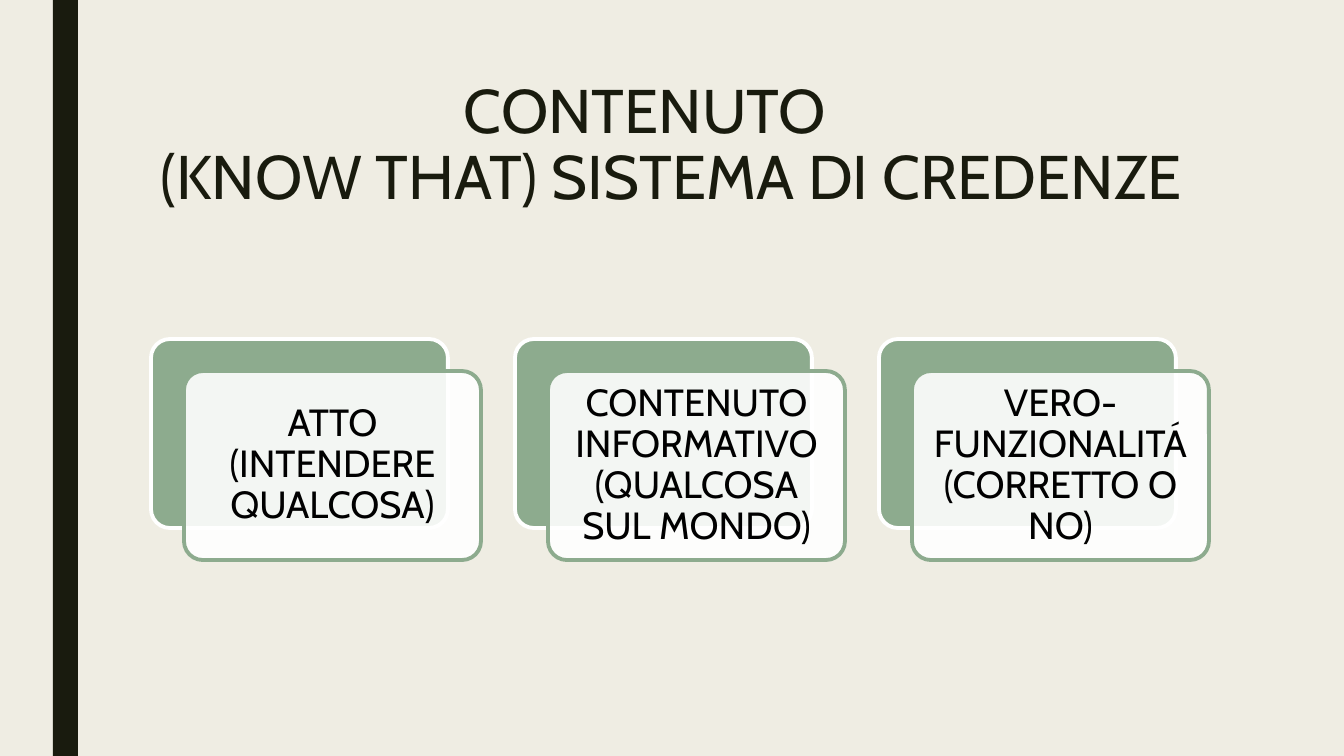
from lxml import etree
from pptx import Presentation
from pptx.dml.color import RGBColor
from pptx.enum.shapes import MSO_SHAPE
from pptx.enum.text import MSO_ANCHOR, PP_ALIGN
from pptx.oxml.ns import qn
from pptx.util import Pt

RECTANGLE = MSO_SHAPE.RECTANGLE
ROUNDED = MSO_SHAPE.ROUNDED_RECTANGLE
TOP, MIDDLE = MSO_ANCHOR.TOP, MSO_ANCHOR.MIDDLE
CENTER = PP_ALIGN.CENTER

SLIDE_WIDTH, SLIDE_HEIGHT = 1344, 756
FONT = "Cabin"
BACKGROUND, DARK, GREEN, WHITE, BLACK = "EFEDE3", "191B0E", "8DAB8E", "FFFFFF", "000000"

TITLE = "CONTENUTO\v(KNOW THAT) SISTEMA DI CREDENZE"
CARDS = [
    "ATTO (INTENDERE QUALCOSA)",
    "CONTENUTO INFORMATIVO (QUALCOSA SUL MONDO)",
    "VERO-FUNZIONALITÁ (CORRETTO O NO)",
]


def px(length):
    return round(length * 914400 / 100.8)


def color(value):
    return RGBColor.from_string(value)


def add_block(slide, kind, box, fill, line=None):
    shape = slide.shapes.add_shape(kind, *map(px, box))
    shape.shadow.inherit = False
    shape.fill.solid()
    shape.fill.fore_color.rgb = color(fill)
    if line:
        shape.line.color.rgb = color(line)
        shape.line.width = Pt(2.75)
    else:
        shape.line.fill.background()
    if kind == ROUNDED:
        shape.adjustments[0] = 0.1
    return shape


def set_opacity(shape, percent):
    fill_color = shape._element.spPr.find(qn("a:solidFill"))[0]
    etree.SubElement(fill_color, qn("a:alpha"), val=str(percent * 1000))


def write_text(shape, text, size, text_color, anchor, spacing, insets):
    frame = shape.text_frame
    frame.word_wrap = True
    frame.vertical_anchor = anchor
    frame.margin_left = frame.margin_right = px(insets[0])
    frame.margin_top = frame.margin_bottom = px(insets[1])
    paragraph = frame.paragraphs[0]
    paragraph.text = text
    paragraph.line_spacing = spacing
    paragraph.font.name = FONT
    paragraph.font.size = Pt(size)
    paragraph.font.color.rgb = color(text_color)
    return paragraph


def add_title(slide, box):
    """Place the title, its first line indented over the second."""
    title = slide.shapes.add_textbox(*map(px, box))
    paragraph = write_text(title, TITLE, 44, DARK, TOP, 0.89, (10, 5))
    paragraph._p.get_or_add_pPr().set("indent", str(px(303)))


def add_card(slide, box, text):
    """Place a green block with a translucent text block shifted over it."""
    left, top, width, height = box
    shift_x, shift_y = 33, 32
    block_width, block_height = width - shift_x, height - shift_y
    add_block(slide, ROUNDED, (left, top, block_width, block_height), GREEN, WHITE)
    front_box = (left + shift_x, top + shift_y, block_width, block_height)
    front = add_block(slide, ROUNDED, front_box, WHITE, GREEN)
    set_opacity(front, 90)
    paragraph = write_text(front, text, 27, BLACK, MIDDLE, 0.9, (11, 11))
    paragraph.alignment = CENTER


def add_cards(slide, box):
    left, top, width, height = box
    gap = 34
    card_width = (width - gap * (len(CARDS) - 1)) // len(CARDS)
    for index, text in enumerate(CARDS):
        card_left = left + index * (card_width + gap)
        add_card(slide, (card_left, top, card_width, height), text)


def main():
    presentation = Presentation()
    presentation.slide_width = px(SLIDE_WIDTH)
    presentation.slide_height = px(SLIDE_HEIGHT)
    slide = presentation.slides.add_slide(presentation.slide_layouts[6])
    slide.background.fill.solid()
    slide.background.fill.fore_color.rgb = color(BACKGROUND)
    add_block(slide, RECTANGLE, (53, 0, 25, SLIDE_HEIGHT), DARK)
    add_title(slide, (151, 76, 1058, 163))
    add_cards(slide, (151, 339, 1058, 221))
    presentation.save("out.pptx")


if __name__ == "__main__":
    main()
